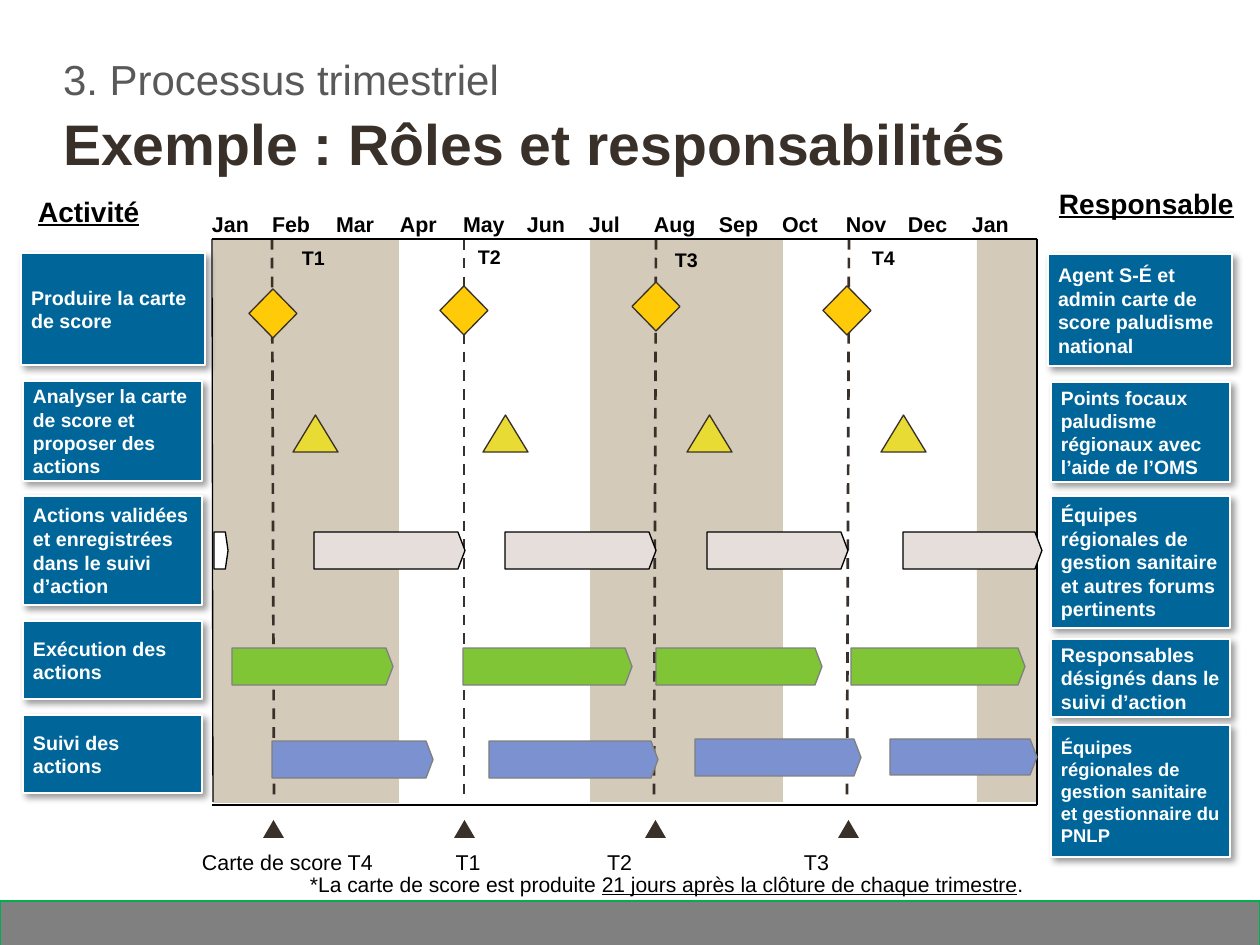
from dataclasses import dataclass
from typing import NamedTuple, Optional

from lxml.etree import SubElement
from pptx import Presentation
from pptx.dml.color import RGBColor
from pptx.enum.dml import MSO_LINE
from pptx.enum.shapes import MSO_CONNECTOR, MSO_SHAPE as Kind
from pptx.enum.text import MSO_ANCHOR as Anchor, MSO_AUTO_SIZE, PP_ALIGN as Align
from pptx.oxml.ns import qn
from pptx.shapes.autoshape import Shape
from pptx.util import Emu, Pt

PX = 7112
FONT = "Arial"

WHITE = RGBColor(0xFF, 0xFF, 0xFF)
BLACK = RGBColor(0x00, 0x00, 0x00)
GREY = RGBColor(0x80, 0x80, 0x80)
BORDER_GREEN = RGBColor(0x00, 0xB0, 0x50)
DARK = RGBColor(0x39, 0x30, 0x2A)
SUBTITLE_GREY = RGBColor(0x59, 0x59, 0x59)
BLUE = RGBColor(0x00, 0x66, 0x99)
TAN = RGBColor(0xD3, 0xCA, 0xB9)
AMBER = RGBColor(0xFF, 0xCA, 0x08)
YELLOW = RGBColor(0xE8, 0xDB, 0x34)
BEIGE = RGBColor(0xE5, 0xDE, 0xDB)
GREEN = RGBColor(0x80, 0xC5, 0x35)
PERIWINKLE = RGBColor(0x7B, 0x91, 0xD0)


class Box(NamedTuple):
    x: int
    y: int
    w: int
    h: int


@dataclass(frozen=True)
class Run:
    text: str
    size: float
    color: RGBColor = BLACK
    bold: bool = False
    underline: bool = False


@dataclass(frozen=True)
class Look:
    kind: Kind
    fill: RGBColor
    line: Optional[RGBColor] = None
    width: float = 0.75


@dataclass(frozen=True)
class Role:
    box: Box
    text: str
    size: float = 11


@dataclass(frozen=True)
class Marks:
    look: Look
    boxes: list[Box]


@dataclass(frozen=True)
class Rule:
    x1: int
    y1: int
    x2: int
    y2: int
    width: float = 1.5


def px(n: int) -> Emu:
    return Emu(n * PX)


def write(sp: Shape, runs: list[Run], inset: tuple[int, int] = (0, 0), wrap: bool = True,
          anchor: Anchor = Anchor.TOP, align: Align = Align.LEFT, spacing: float = 1.0) -> None:
    tf = sp.text_frame
    tf.auto_size = MSO_AUTO_SIZE.NONE
    tf.word_wrap = wrap
    tf.vertical_anchor = anchor
    tf.margin_left = tf.margin_right = px(inset[0])
    tf.margin_top = tf.margin_bottom = px(inset[1])
    p = tf.paragraphs[0]
    p.alignment = align
    p.line_spacing = spacing
    for run in runs:
        r = p.add_run()
        r.text = run.text
        r.font.name = FONT
        r.font.size = Pt(run.size)
        r.font.bold = run.bold
        r.font.underline = run.underline
        r.font.color.rgb = run.color


def add_mark(shapes, look: Look, box: Box) -> Shape:
    sp = shapes.add_shape(look.kind, *map(px, box))
    sp.shadow.inherit = False
    sp.fill.solid()
    sp.fill.fore_color.rgb = look.fill
    if look.line is None:
        sp.line.fill.background()
    else:
        sp.line.color.rgb = look.line
        sp.line.width = Pt(look.width)
    if look.kind == Kind.PENTAGON:
        sp.adjustments[0] = 0.19
    return sp


def add_role(shapes, role: Role) -> None:
    sp = add_mark(shapes, ROLE_LOOK, role.box)
    effects = sp._element.spPr.find(qn("a:effectLst"))
    shadow = SubElement(effects, qn("a:outerShdw"), blurRad=str(Pt(4)), dist=str(Pt(3)),
                        dir="2700000", algn="tl", rotWithShape="0")
    color = SubElement(shadow, qn("a:srgbClr"), val="000000")
    SubElement(color, qn("a:alpha"), val="40000")
    write(sp, [Run(role.text, role.size, WHITE, True)], (10, 10), anchor=Anchor.MIDDLE)


def add_text(shapes, box: Box, runs: list[Run], **layout) -> None:
    write(shapes.add_textbox(*map(px, box)), runs, **layout)


def add_rule(shapes, rule: Rule, color: RGBColor, dashed: bool = False) -> None:
    ends = map(px, (rule.x1, rule.y1, rule.x2, rule.y2))
    cx = shapes.add_connector(MSO_CONNECTOR.STRAIGHT, *ends)
    cx.line.color.rgb = color
    cx.line.width = Pt(rule.width)
    if dashed:
        cx.line.dash_style = MSO_LINE.DASH
    SubElement(cx._element.spPr, qn("a:effectLst"))


ROLE_LOOK = Look(Kind.RECTANGLE, BLUE, WHITE, 1)
BAND = Look(Kind.RECTANGLE, TAN)
LABEL = Look(Kind.RECTANGLE, WHITE)
FOOTER = Look(Kind.RECTANGLE, GREY, BORDER_GREEN)
TOP, BOTTOM, LEFT, RIGHT = 239, 805, 212, 1037

ROLES = [
    Role(Box(21, 253, 184, 112), "Produire la carte de score"),
    Role(Box(23, 381, 179, 100), "Analyser la carte de score et proposer des actions", 10.8),
    Role(Box(23, 496, 179, 109), "Actions validées et enregistrées dans le suivi d’action"),
    Role(Box(23, 621, 179, 78), "Exécution des actions"),
    Role(Box(23, 715, 179, 78), "Suivi des actions"),
    Role(Box(1048, 254, 184, 112), "Agent S-É et admin carte de score paludisme national"),
    Role(Box(1051, 382, 179, 100), "Points focaux paludisme régionaux avec l’aide de l’OMS", 10.8),
    Role(Box(1051, 496, 179, 132),
         "Équipes régionales de gestion sanitaire et autres forums pertinents"),
    Role(Box(1051, 639, 179, 78), "Responsables désignés dans le suivi d’action"),
    Role(Box(1051, 725, 179, 132),
         "Équipes régionales de gestion sanitaire et gestionnaire du PNLP", 10.3),
]
BANDS = [Box(213, TOP, 186, 564), Box(590, TOP, 193, 563), Box(977, TOP, 59, 563)]
MONTHS = [("Jan", 212), ("Feb", 272), ("Mar", 336), ("Apr", 400), ("May", 463), ("Jun", 527),
          ("Jul", 589), ("Aug", 654), ("Sep", 719), ("Oct", 782), ("Nov", 846), ("Dec", 908),
          ("Jan", 972)]
FRAME = [Rule(LEFT, TOP, 213, 802, 0.75), Rule(RIGHT, TOP, RIGHT, BOTTOM, 0.75),
         Rule(LEFT, BOTTOM, RIGHT, BOTTOM), Rule(LEFT, TOP, RIGHT, TOP)]
QUARTER_RULES = [Rule(272, TOP, 274, 802), Rule(464, TOP, 464, 802),
                 Rule(656, TOP, 654, 795), Rule(849, TOP, 847, 802)]
QUARTERS = [("T1", 289, 240), ("T2", 465, 239), ("T3", 662, 242), ("T4", 859, 240)]
MARKS = [
    Marks(Look(Kind.PENTAGON, GREEN, GREY),
          [Box(x, 648, w, 37) for x, w in ((232, 161), (463, 169), (656, 166), (851, 174))]),
    Marks(Look(Kind.PENTAGON, BEIGE, BLACK),
          [Box(x, 532, w, 37) for x, w in ((314, 151), (505, 151), (707, 141), (903, 139))]),
    Marks(Look(Kind.PENTAGON, WHITE, BLACK), [Box(214, 532, 14, 37)]),
    Marks(Look(Kind.PENTAGON, PERIWINKLE, GREY),
          [Box(272, 741, 161, 37), Box(489, 741, 169, 37),
           Box(695, 739, 166, 37), Box(890, 739, 147, 36)]),
    Marks(Look(Kind.ISOSCELES_TRIANGLE, DARK),
          [Box(x, 820, 21, 18) for x in (263, 454, 645, 838)]),
    Marks(Look(Kind.DIAMOND, AMBER, DARK),
          [Box(x, y, 48, 49) for x, y in ((249, 289), (440, 286), (632, 282), (823, 286))]),
    Marks(Look(Kind.ISOSCELES_TRIANGLE, YELLOW, DARK),
          [Box(x, 415, 45, 37) for x in (293, 483, 687, 881)]),
]
SCORECARDS = [("Carte de score T4", Box(202, 849, 188, 26), Align.LEFT),
              ("T1", Box(404, 849, 128, 17), Align.CENTER),
              ("T2", Box(607, 849, 128, 26), Align.LEFT),
              ("T3", Box(804, 849, 128, 26), Align.LEFT)]
HEADINGS = [("Activité", Box(38, 194, 161, 33)), ("Responsable", Box(1059, 186, 176, 33))]


def main() -> None:
    prs = Presentation()
    prs.slide_width, prs.slide_height = px(1260), px(945)
    slide = prs.slides.add_slide(prs.slide_layouts[5])
    shapes = slide.shapes

    title = shapes.title
    title.left, title.top, title.width, title.height = map(px, (63, 108, 1178, 69))
    write(title, [Run("Exemple : Rôles et responsabilités", 32, DARK, True)])
    add_text(shapes, Box(63, 59, 1134, 46),
             [Run("3. Processus trimestriel", 23.5, SUBTITLE_GREY)], spacing=0.9)

    add_mark(shapes, FOOTER, Box(0, 901, 1260, 47))
    for band in BANDS:
        add_mark(shapes, BAND, band)
    for month, x in MONTHS:
        add_text(shapes, Box(x, 206, 63, 35), [Run(month, 12, bold=True)],
                 inset=(0, 4), wrap=False, anchor=Anchor.MIDDLE)
    for rule in QUARTER_RULES:
        add_rule(shapes, rule, DARK, dashed=True)
    for rule in FRAME:
        add_rule(shapes, rule, BLACK)
    for marks in MARKS:
        for box in marks.boxes:
            add_mark(shapes, marks.look, box)
    for quarter, x, y in QUARTERS:
        add_text(shapes, Box(x, y, 64, 37), [Run(quarter, 11, bold=True)], inset=(13, 6))
    for text, box in HEADINGS:
        add_text(shapes, box, [Run(text, 15.7, bold=True, underline=True)], wrap=False)
    for role in ROLES:
        add_role(shapes, role)
    for text, box, align in SCORECARDS:
        write(add_mark(shapes, LABEL, box), [Run(text, 12)], wrap=False, align=align)
    add_text(shapes, Box(297, 865, 950, 39), [
        Run("*La carte de score est produite ", 11.8),
        Run("21 jours après la clôture de chaque trimestre", 11.8, underline=True),
        Run(".", 11.8),
    ], inset=(13, 6))
    prs.save("out.pptx")


if __name__ == "__main__":
    main()
